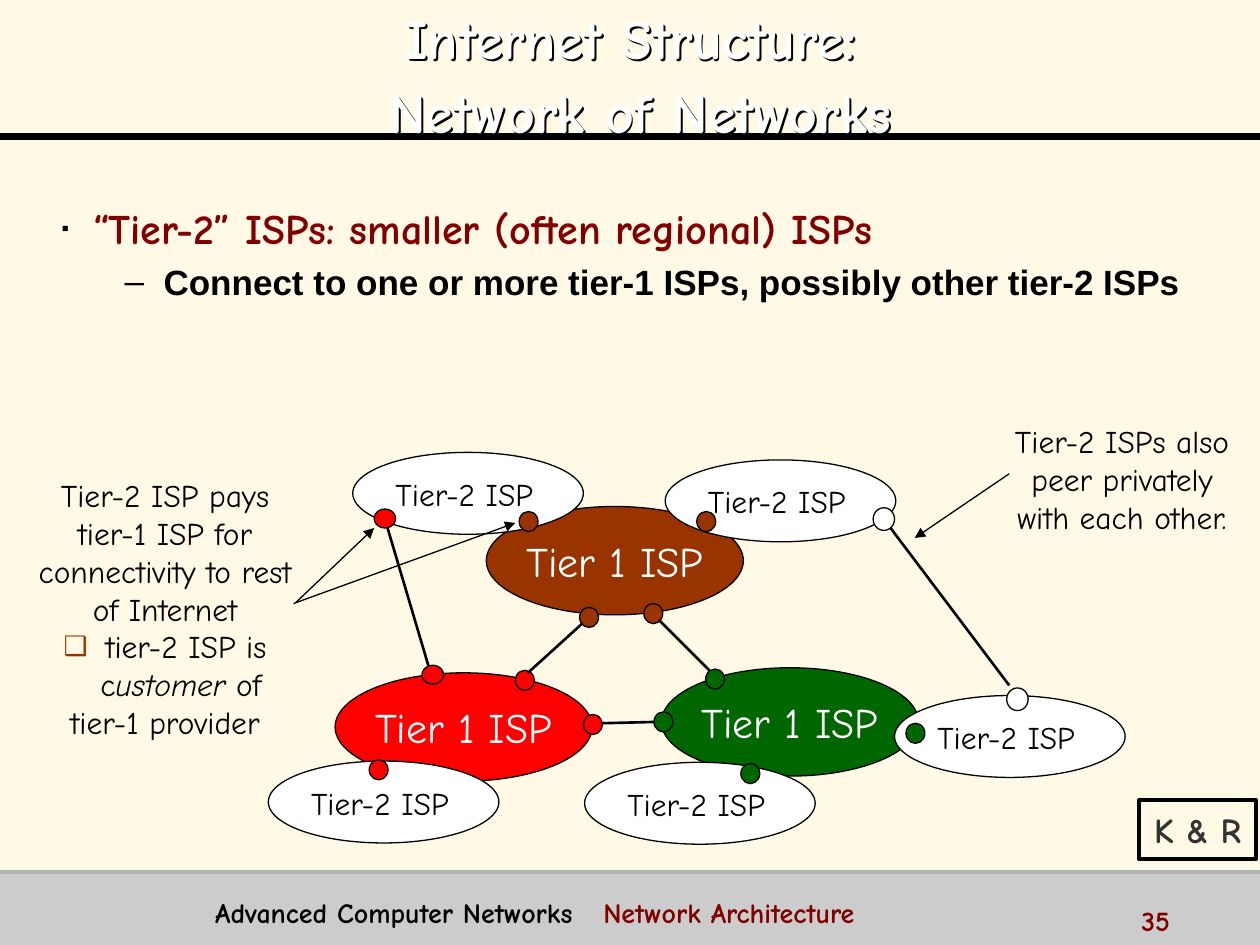
from dataclasses import dataclass
from typing import NamedTuple

from lxml import etree
from pptx import Presentation
from pptx.dml.color import RGBColor
from pptx.enum.shapes import MSO_CONNECTOR, MSO_SHAPE
from pptx.enum.text import MSO_ANCHOR, PP_ALIGN
from pptx.oxml.ns import qn
from pptx.util import Cm, Pt

STRAIGHT = MSO_CONNECTOR.STRAIGHT
OVAL, RECTANGLE = MSO_SHAPE.OVAL, MSO_SHAPE.RECTANGLE
MIDDLE, TOP = MSO_ANCHOR.MIDDLE, MSO_ANCHOR.TOP
CENTER, LEFT = PP_ALIGN.CENTER, PP_ALIGN.LEFT


class Style(NamedTuple):
    color: str
    format: dict


def style(size: int, color: str, bold: bool = False, name: str = "Comic Neue") -> Style:
    return Style(color, {"name": name, "size": Pt(size), "bold": bold})


@dataclass(frozen=True)
class Theme:
    paper: str = "FFF9E6"
    footer_band: str = "CCCCCC"
    footer_rule: str = "B2B2B2"
    black: str = "000000"
    white: str = "FFFFFF"
    red: str = "FF0000"
    brown: str = "993300"
    green: str = "006600"
    title: Style = style(32, "FFFFFF", True)
    topic: Style = style(24, "800000", True)
    detail: Style = style(20, "000000", True, "Arial")
    tier1: Style = style(24, "FFFFFF")
    note: Style = style(18, "000000")
    credit: Style = style(20, "333333", True)
    course: Style = style(16, "000000", True)
    chapter: Style = style(16, "800000", True)


THEME = Theme()


class Box(NamedTuple):
    """Left, top, width and height in inches."""
    left: float
    top: float
    width: float
    height: float


class Tier1(NamedTuple):
    left: float
    top: float
    color: str


class Tier2(NamedTuple):
    left: float
    top: float
    uplink: tuple[float, float]
    color: str


class Link(NamedTuple):
    start: tuple[float, float]
    end: tuple[float, float]


TIER1_ISPS = [Tier1(2.66, 5.34, THEME.red), Tier1(3.86, 4.02, THEME.brown),
              Tier1(5.25, 5.3, THEME.green)]
TIER1_PORTS = {
    THEME.green: [(5.6, 5.31), (5.19, 5.65)],
    THEME.brown: [(5.11, 4.79), (4.6, 4.82)],
    THEME.red: [(4.09, 5.32), (4.63, 5.67)],
}
TIER1_LINKS = [Link((4.78, 5.74), (5.19, 5.73)), Link((5.23, 4.92), (5.63, 5.32)),
               Link((4.19, 5.34), (4.62, 4.95))]
TIER2_ISPS = [
    Tier2(5.28, 3.65, (5.53, 4.06), THEME.brown),
    Tier2(2.8, 3.59, (4.12, 4.06), THEME.brown),
    Tier2(2.13, 6.04, (2.93, 6.03), THEME.red),
    Tier2(4.64, 6.05, (5.88, 6.06), THEME.green),
    Tier2(7.1, 5.52, (7.19, 5.74), THEME.green),
]
TIER2_LINKS = [Link((3.07, 4.17), (3.42, 5.35)), Link((7.06, 4.18), (8.01, 5.44))]
POINTERS = [Link((2.33, 4.79), (4.09, 4.15)), Link((2.35, 4.78), (2.97, 4.19)),
            Link((8.01, 3.76), (7.26, 4.27))]


def inches(value: float) -> Cm:
    return Cm(value * 2.54)


def rgb(color: str) -> RGBColor:
    return RGBColor.from_string(color)


def add_outline(shapes, kind, box: Box, fill: str | None, line: str | None = THEME.black,
                weight: float = 0.75):
    shape = shapes.add_shape(kind, *map(inches, box))
    shape.shadow.inherit = False
    if fill:
        shape.fill.solid()
        shape.fill.fore_color.rgb = rgb(fill)
    else:
        shape.fill.background()
    if line:
        shape.line.color.rgb = rgb(line)
        shape.line.width = Pt(weight)
    else:
        shape.line.fill.background()
    return shape


def add_line(shapes, link: Link, weight: float, color: str = THEME.black, arrow: bool = False):
    line = shapes.add_connector(STRAIGHT, *map(inches, link.start + link.end))
    line.line.color.rgb = rgb(color)
    line.line.width = Pt(weight)
    if arrow:
        etree.SubElement(line.line._get_or_add_ln(), qn("a:tailEnd"), type="triangle")
    etree.SubElement(line._element.spPr, qn("a:effectLst"))


def add_run(paragraph, text: str, look: Style, **extra):
    run = paragraph.add_run()
    run.text = text
    for attribute, value in {**look.format, **extra}.items():
        setattr(run.font, attribute, value)
    run.font.color.rgb = rgb(look.color)


def set_frame(shape, wrap: bool, anchor=TOP, align=LEFT):
    """Prepare the text frame and return its first paragraph."""
    frame = shape.text_frame
    frame.word_wrap = wrap
    frame.vertical_anchor = anchor
    frame.paragraphs[0].alignment = align
    return frame.paragraphs[0]


def add_text(shapes, box: Box, wrap: bool = True, anchor=TOP, align=LEFT):
    textbox = shapes.add_textbox(*map(inches, box))
    return textbox, set_frame(textbox, wrap, anchor, align)


def add_bullet(paragraph, mark: str, color: str, size: int, indent: float, hanging: float):
    props = paragraph._p.get_or_add_pPr()
    props.set("marL", str(inches(indent)))
    props.set("indent", str(-inches(hanging)))
    tint = etree.SubElement(props, qn("a:buClr"))
    etree.SubElement(tint, qn("a:srgbClr"), val=color)
    etree.SubElement(props, qn("a:buSzPct"), val=str(size * 1000))
    etree.SubElement(props, qn("a:buFont"), typeface="Arial")
    etree.SubElement(props, qn("a:buChar"), char=mark)


def add_shadow(textbox):
    """Cast a hard shadow from the letters of an unfilled text box."""
    effects = etree.SubElement(textbox._element.spPr, qn("a:effectLst"))
    shadow = etree.SubElement(effects, qn("a:outerShdw"), blurRad="0",
                              dist=str(Pt(1.6)), dir="2700000", algn="ctr", rotWithShape="0")
    etree.SubElement(shadow, qn("a:srgbClr"), val=THEME.black)


def add_port(shapes, corner: tuple[float, float], color: str, width=0.15, height=0.16):
    add_outline(shapes, OVAL, Box(*corner, width, height), color)


def add_frame_and_heading(shapes):
    add_outline(shapes, RECTANGLE, Box(0, 6.92, 10, 0.58), THEME.footer_band, None)
    add_line(shapes, Link((0, 1.08), (10, 1.08)), 4)
    add_line(shapes, Link((0, 6.92), (10, 6.92)), 2, THEME.footer_rule)
    title, heading = add_text(shapes, Box(0.2, 0.13, 9.61, 0.87), True, MIDDLE, CENTER)
    add_shadow(title)
    heading.line_spacing = 1.1
    add_run(heading, "Internet Structure:", THEME.title)
    heading.add_line_break()
    add_run(heading, " Network of Networks", THEME.title)


def add_points(shapes):
    points, topic = add_text(shapes, Box(0.39, 1.56, 9.23, 1))
    add_bullet(topic, "▪", THEME.black, 50, 0.25, 0.25)
    add_run(topic, "“Tier-2” ISPs: smaller (often regional) ISPs", THEME.topic)
    detail = points.text_frame.add_paragraph()
    detail.level = 1
    detail.space_before = Pt(4)
    add_bullet(detail, "–", THEME.black, 100, 0.81, 0.31)
    add_run(detail, "Connect to one or more tier-1 ISPs, possibly other tier-2 ISPs", THEME.detail)


def add_network(shapes):
    for isp in TIER1_ISPS:
        cloud = add_outline(shapes, OVAL, Box(isp.left, isp.top, 2.04, 0.86), isp.color)
        add_run(set_frame(cloud, False, MIDDLE, CENTER), "Tier 1 ISP", THEME.tier1)
    for color, corners in TIER1_PORTS.items():
        for corner in corners:
            add_port(shapes, corner, color)
    for link in TIER1_LINKS:
        add_line(shapes, link, 1.5)
    for isp in TIER2_ISPS:
        add_outline(shapes, OVAL, Box(isp.left, isp.top, 1.83, 0.65), THEME.white)
        label_box = Box(isp.left + 0.15, isp.top + 0.13, 1.47, 0.4)
        _, label = add_text(shapes, label_box, False, TOP, CENTER)
        add_run(label, "Tier-2 ISP", THEME.note)
        add_port(shapes, isp.uplink, isp.color)
    for link in TIER2_LINKS:
        add_line(shapes, link, 1.5)
    for corner in [(2.97, 4.04), (3.35, 5.28)]:
        add_port(shapes, corner, THEME.red, 0.17, 0.15)
    for corner in [(6.93, 4.03), (7.99, 5.46)]:
        add_port(shapes, corner, THEME.white, 0.17, 0.18)


def add_notes_beside_network(shapes):
    terms, payment = add_text(shapes, Box(0.19, 3.73, 2.24, 2.2), align=CENTER)
    add_run(payment, "Tier-2 ISP pays tier-1 ISP for connectivity to rest of Internet", THEME.note)
    customer, provider = (terms.text_frame.add_paragraph() for _ in range(2))
    customer.alignment = provider.alignment = CENTER
    add_bullet(customer, "❑", THEME.brown, 85, 0.25, 0.25)
    for text, italic in [(" tier-2 ISP is c", False), ("ustomer", True), (" of", False)]:
        add_run(customer, text, THEME.note, italic=italic)
    add_run(provider, "tier-1 provider", THEME.note)
    _, peering = add_text(shapes, Box(7.92, 3.3, 1.97, 1.3), align=CENTER)
    add_run(peering, "Tier-2 ISPs also peer privately with each other.", THEME.note)
    for pointer in POINTERS:
        add_line(shapes, pointer, 0.75, arrow=True)


def add_footer(shapes):
    credit = add_outline(shapes, RECTANGLE, Box(9.04, 6.35, 0.93, 0.47), None, weight=2)
    add_run(set_frame(credit, False, MIDDLE, CENTER), "K & R", THEME.credit)
    _, footer = add_text(shapes, Box(1.61, 7.06, 7.2, 0.31))
    tabs = etree.SubElement(footer._p.get_or_add_pPr(), qn("a:tabLst"))
    etree.SubElement(tabs, qn("a:tab"), pos=str(inches(3.08)), algn="l")
    add_run(footer, "Advanced Computer Networks\t", THEME.course)
    add_run(footer, "Network Architecture", THEME.chapter)
    _, number = add_text(shapes, Box(8.96, 7.12, 1, 0.25))
    add_run(number, "35", THEME.chapter)


def main():
    deck = Presentation()
    deck.slide_width, deck.slide_height = inches(10), inches(7.5)
    slide = deck.slides.add_slide(deck.slide_layouts[6])
    slide.background.fill.solid()
    slide.background.fill.fore_color.rgb = rgb(THEME.paper)
    for add_part in (add_frame_and_heading, add_points, add_network,
                     add_notes_beside_network, add_footer):
        add_part(slide.shapes)
    deck.save("out.pptx")


if __name__ == "__main__":
    main()
